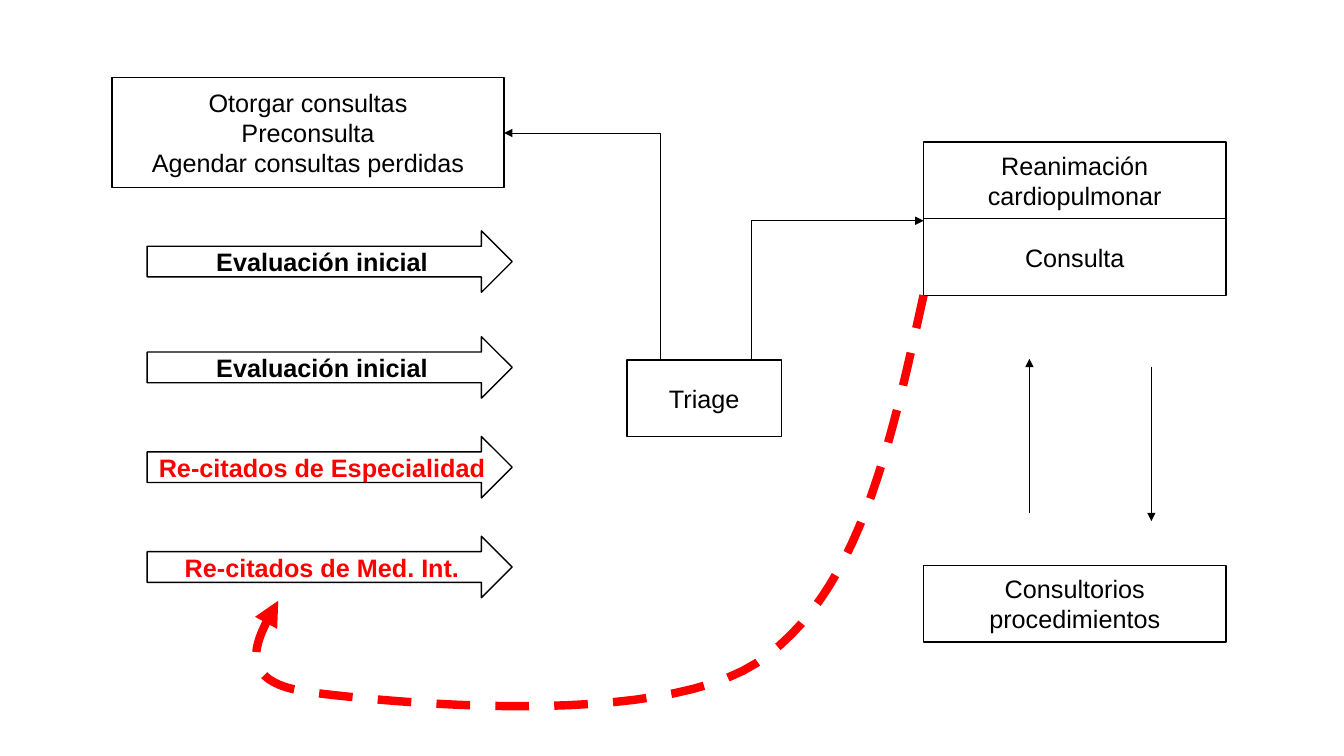
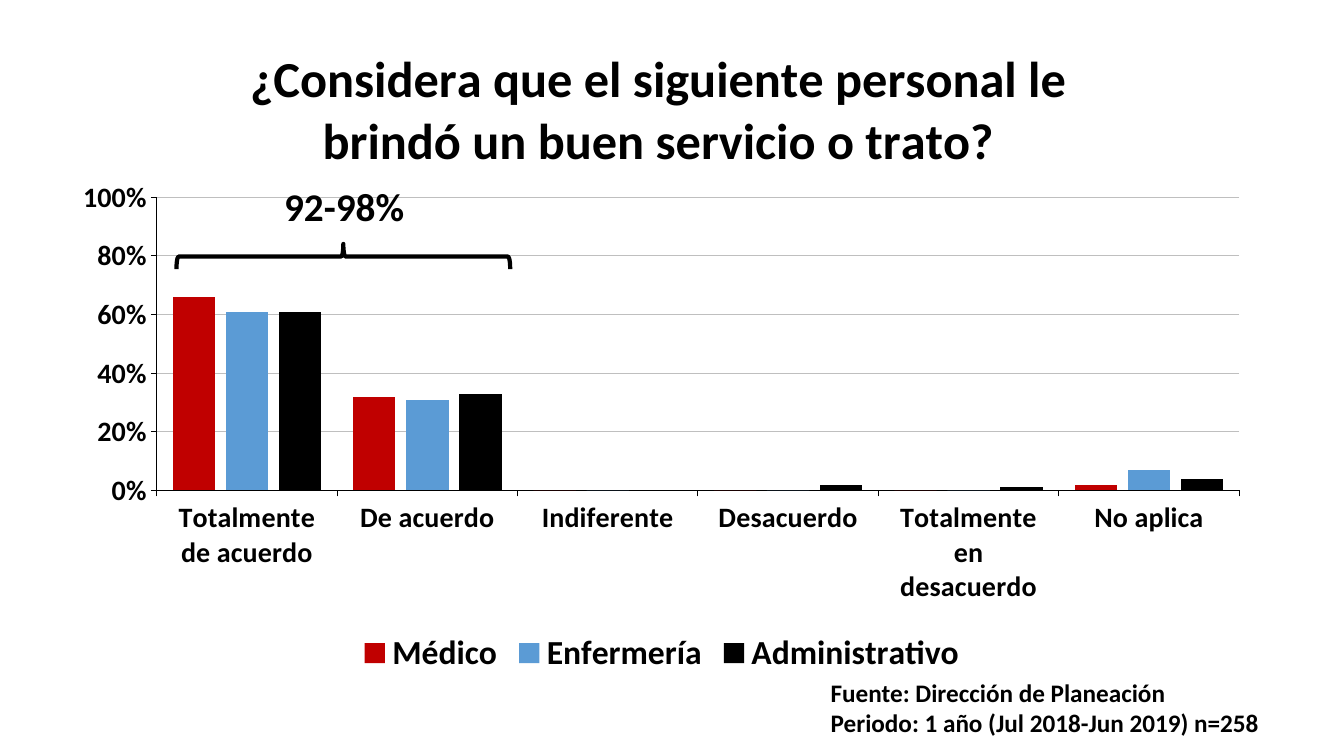
from lxml.etree import SubElement
from pptx import Presentation
from pptx.chart.data import CategoryChartData
from pptx.dml.color import RGBColor
from pptx.enum.chart import XL_CHART_TYPE, XL_LEGEND_POSITION, XL_TICK_MARK
from pptx.enum.dml import MSO_LINE
from pptx.enum.shapes import MSO_CONNECTOR as CONN, MSO_SHAPE as SHAPE
from pptx.enum.text import MSO_ANCHOR, PP_ALIGN
from pptx.oxml import parse_xml
from pptx.oxml.ns import nsdecls, qn
from pptx.util import Inches, Pt

BLACK, RED = "000000", "FF0000"


def style(font, size, name, color=BLACK, bold=True):
    font.size, font.name, font.bold = Pt(size), name, bold
    font.color.rgb = RGBColor.from_string(color)


def outline(s, width, color=BLACK, arrow=False):
    s.line.width = Pt(width)
    s.line.color.rgb = RGBColor.from_string(color)
    if arrow:
        SubElement(s.line._get_or_add_ln(), qn("a:tailEnd"), type="triangle")


prs = Presentation()
prs.slide_width, prs.slide_height = Inches(13.33), Inches(7.5)
blank = prs.slide_layouts[6]

slide = prs.slides.add_slide(blank)
box_w, box_h, right_x = 3, 0.76, 9.16
arrow_x, arrow_w, arrow_h = 1.46, 3.62, 0.61
boxes = [
    (SHAPE.RECTANGLE, 6.22, 3.57, 1.53, box_h, "Triage", BLACK),
    (SHAPE.RECTANGLE, right_x, 1.41, box_w, box_h, "Reanimación cardiopulmonar", BLACK),
    (SHAPE.RECTANGLE, right_x, 2.17, box_w, box_h, "Consulta", BLACK),
    (SHAPE.RECTANGLE, right_x, 5.61, box_w, box_h, "Consultorios procedimientos", BLACK),
    (SHAPE.RECTANGLE, 1.11, 0.77, 3.89, 1.09,
     "Otorgar consultas\nPreconsulta\nAgendar consultas perdidas", BLACK),
]
for y, text, color in [
    (2.29, "Evaluación inicial", BLACK),
    (3.34, "Evaluación inicial", BLACK),
    (4.33, "Re-citados de Especialidad", RED),
    (5.32, "Re-citados de Med. Int.", RED),
]:
    boxes.append((SHAPE.RIGHT_ARROW, arrow_x, y, arrow_w, arrow_h, text, color))

for kind, x, y, w, h, text, color in boxes:
    s = slide.shapes.add_shape(kind, Inches(x), Inches(y), Inches(w), Inches(h))
    s.shadow.inherit = False
    s.fill.background()
    outline(s, 1)
    tf = s.text_frame
    tf.text = text
    tf.word_wrap = True
    tf.vertical_anchor = MSO_ANCHOR.MIDDLE
    for p in tf.paragraphs:
        p.alignment = PP_ALIGN.CENTER
        style(p.font, 18, "Arial", color, kind == SHAPE.RIGHT_ARROW)

for kind, x1, y1, x2, y2, arrow in [
    (CONN.ELBOW, 4.65, 3.22, 6.9, 1.67, True),
    (CONN.STRAIGHT, 11.42, 3.64, 11.42, 5.17, True),
    (CONN.STRAIGHT, 10.21, 5.09, 10.21, 3.56, True),
    (CONN.STRAIGHT, 7.45, 3.56, 7.45, 2.19, False),
    (CONN.STRAIGHT, 7.45, 2.19, 9.16, 2.19, True),
]:
    c = slide.shapes.add_connector(kind, Inches(x1), Inches(y1), Inches(x2), Inches(y2))
    outline(c, 0.5, arrow=arrow)
    sp_pr = c._element.spPr
    SubElement(sp_pr, qn("a:effectLst"))
    if kind == CONN.ELBOW:
        sp_pr.find(qn("a:xfrm")).set("rot", "16200000")
        sp_pr.find(qn("a:prstGeom")).set("prst", "bentConnector2")

start = (9.16, 2.93)
curves = [
    ((8.83, 4.43), (8.51, 5.92), (7.5, 6.58)),
    ((6.49, 7.23), (3.88, 6.97), (3.09, 6.87)),
    ((2.3, 6.77), (2.53, 6.36), (2.76, 5.96)),
]
steps = 24
points = [start]
for b, c, d in curves:
    a = points[-1]
    for i in range(1, steps + 1):
        t = i / steps
        u = 1 - t
        weights = (u ** 3, 3 * u * u * t, 3 * u * t * t, t ** 3)
        points.append(tuple(sum(k * q[n] for k, q in zip(weights, (a, b, c, d)))
                            for n in (0, 1)))
points = [(Inches(x), Inches(y)) for x, y in points]
builder = slide.shapes.build_freeform(*points[0])
builder.add_line_segments(points[1:], close=False)
return_path = builder.convert_to_shape()
return_path.shadow.inherit = False
return_path.fill.background()
return_path.line.dash_style = MSO_LINE.DASH
outline(return_path, 6, RED, arrow=True)

slide = prs.slides.add_slide(blank)
data = CategoryChartData(number_format="0%")
data.categories = ["Totalmente de acuerdo", "De acuerdo", "Indiferente", "Desacuerdo",
                   "Totalmente en desacuerdo", "No aplica"]
series = [
    ("Médico", (0.66, 0.32, 0, 0, 0, 0.02), "C00000"),
    ("Enfermería", (0.61, 0.31, 0, 0, 0, 0.07), "5B9BD5"),
    ("Administrativo", (0.61, 0.33, 0, 0.02, 0.01, 0.04), BLACK),
]
for name, values, color in series:
    data.add_series(name, values)
chart = slide.shapes.add_chart(XL_CHART_TYPE.COLUMN_CLUSTERED, Inches(0.6), Inches(0.14),
                               Inches(11.93), Inches(6.61), data).chart
style(chart.font, 14, "Calibri")
chart.has_title = True
tf = chart.chart_title.text_frame
tf.text = "¿Considera que el siguiente personal le brindó un buen servicio o trato?"
style(tf.paragraphs[0].font, 36, "Calibri")

plot = chart.plots[0]
plot.gap_width, plot.overlap, plot.vary_by_categories = 75, -25, False
for bars, (name, values, color) in zip(plot.series, series):
    bars.format.fill.solid()
    bars.format.fill.fore_color.rgb = RGBColor.from_string(color)

for axis in (chart.category_axis, chart.value_axis):
    style(axis.tick_labels.font, 20, "Calibri")
    axis.major_tick_mark = XL_TICK_MARK.OUTSIDE
    outline(axis.format, 0.75)
axis = chart.value_axis
axis.minimum_scale, axis.maximum_scale, axis.major_unit = 0, 1, 0.2
axis.tick_labels.number_format = "0%"
axis.tick_labels.number_format_is_linked = False
outline(axis.major_gridlines.format, 0.75, "BFBFBF")

chart.has_legend = True
chart.legend.position = XL_LEGEND_POSITION.BOTTOM
chart.legend.include_in_layout = False
style(chart.legend.font, 24, "Calibri")

title = chart.chart_title._element
plot_area = chart._chartSpace.chart.plotArea
for parent, place in [
    (title, {"xMode": "edge", "yMode": "edge", "x": 0.15, "y": 0.03}),
    (plot_area, {"layoutTarget": "inner", "xMode": "edge", "yMode": "edge",
                 "x": 0.08, "y": 0.275, "w": 0.9, "h": 0.44}),
]:
    for old in parent.findall(qn("c:layout")):
        parent.remove(old)
    marks = "".join(f'<c:{k} val="{v}"/>' for k, v in place.items())
    layout = parse_xml(f'<c:layout {nsdecls("c")}><c:manualLayout>{marks}'
                       '</c:manualLayout></c:layout>')
    parent.insert(1 if parent is title else 0, layout)

brace = slide.shapes.add_shape(SHAPE.LEFT_BRACE, Inches(3.28), Inches(0.89),
                               Inches(0.25), Inches(3.31))
brace.rotation = 90
brace.shadow.inherit = False
brace.fill.background()
outline(brace, 3)

for x, y, w, h, size, wrap, text in [
    (8.14, 6.67, 4.65, 0.71, 18, True,
     "Fuente: Dirección de Planeación\nPeriodo: 1 año (Jul 2018-Jun 2019) n=258"),
    (2.72, 1.76, 1.41, 0.57, 28, False, "92-98%"),
]:
    s = slide.shapes.add_textbox(Inches(x), Inches(y), Inches(w), Inches(h))
    tf = s.text_frame
    tf.text = text
    tf.word_wrap = wrap
    for p in tf.paragraphs:
        style(p.font, size, "Calibri")

prs.save("out.pptx")
